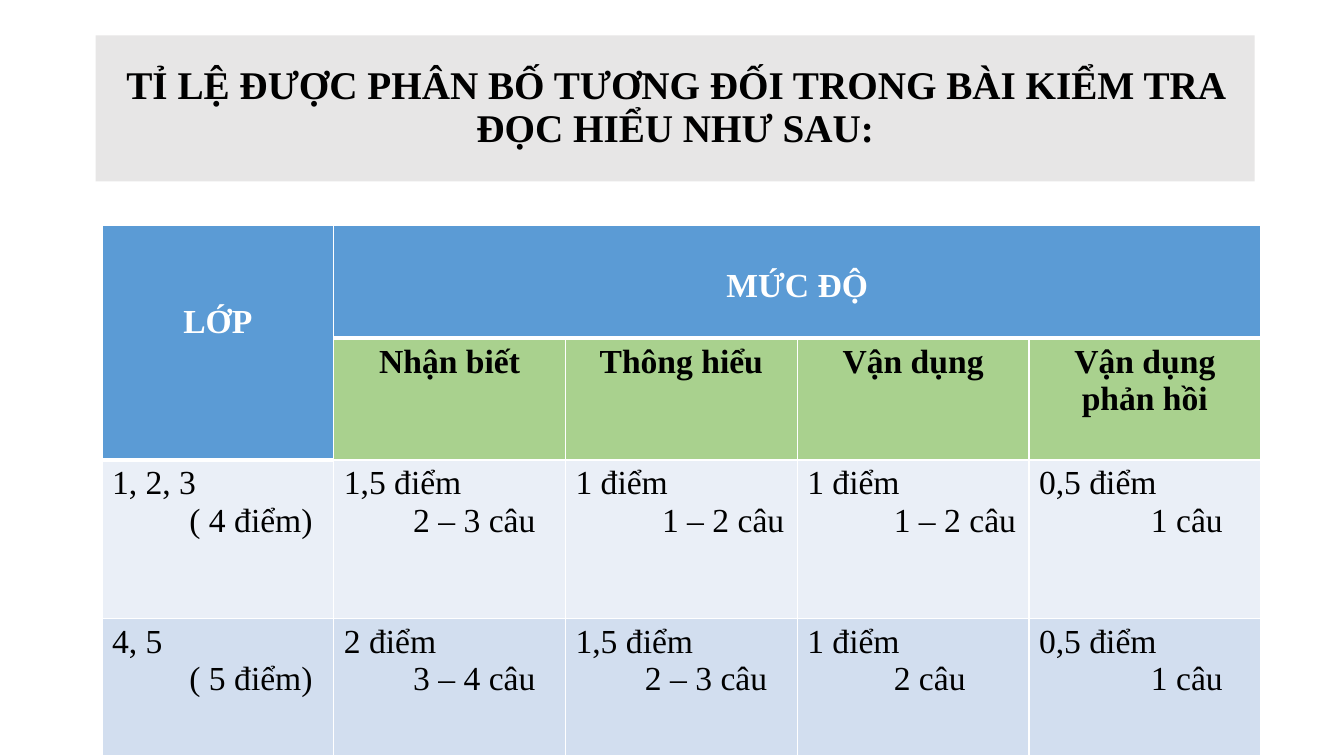
from lxml import etree
from pptx import Presentation
from pptx import util as u
from pptx.dml.color import RGBColor
from pptx.enum import shapes, text
from pptx.oxml.ns import qn

FONT = "Times New Roman"
BLACK, WHITE = "000000", "FFFFFF"
BLUE, GREEN = "5B9BD5", "A9D18E"
COLUMN_WIDTH = 5.84
ROW_HEIGHTS = (2.85, 3.07, 3.99, 3.47)

LEVELS = ("Nhận biết", "Thông hiểu", "Vận dụng", "Vận dụng phản hồi")
# Each body cell: first line, second line, indent of the second line in cm
BODY_ROWS = (
    ("EAEFF7", (("1, 2, 3", "( 4 điểm)", 1.95),
                ("1,5 điểm", "2 – 3 câu", 1.75),
                ("1 điểm", "1 – 2 câu", 2.18),
                ("1 điểm", "1 – 2 câu", 2.18),
                ("0,5 điểm", "1 câu", 2.82))),
    ("D2DEEF", (("4, 5", "( 5 điểm)", 1.95),
                ("2 điểm", "3 – 4 câu", 1.75),
                ("1,5 điểm", "2 – 3 câu", 1.75),
                ("1 điểm", "2 câu", 2.18),
                ("0,5 điểm", "1 câu", 2.82))),
)


def rgb(value):
    return RGBColor.from_string(value)


def style_paragraph(paragraph, size, color, bold, alignment):
    paragraph.alignment = alignment
    font = paragraph.font
    font.name, font.size, font.bold = FONT, u.Pt(size), bold
    font.color.rgb = rgb(color)


def add_title(slide, title):
    shape = slide.shapes.add_shape(shapes.MSO_SHAPE.RECTANGLE, u.Cm(2.41),
                                   u.Cm(0.89), u.Cm(29.21), u.Cm(3.68))
    shape.shadow.inherit = False
    shape.fill.solid()
    shape.fill.fore_color.rgb = rgb("E7E6E6")
    shape.line.fill.background()
    frame = shape.text_frame
    frame.word_wrap = True
    frame.vertical_anchor = text.MSO_ANCHOR.MIDDLE
    frame.text = title
    paragraph = frame.paragraphs[0]
    style_paragraph(paragraph, 28, BLACK, True, text.PP_ALIGN.CENTER)
    paragraph.line_spacing = 0.9


def set_borders(cell, bottom):
    properties = cell._tc.get_or_add_tcPr()
    for tag, points in (("lnL", 1), ("lnR", 1), ("lnT", 1), ("lnB", bottom)):
        line = etree.SubElement(properties, qn(f"a:{tag}"), w=str(u.Pt(points)))
        fill = etree.SubElement(line, qn("a:solidFill"))
        etree.SubElement(fill, qn("a:srgbClr"), val=WHITE)


def fill_cell(cell, fill):
    cell.fill.solid()
    cell.fill.fore_color.rgb = rgb(fill)


def write_heading(cell, heading, fill, color, top=0.13):
    fill_cell(cell, fill)
    cell.margin_top = u.Cm(top)
    cell.text = heading
    style_paragraph(cell.text_frame.paragraphs[0], 24, color, True,
                    text.PP_ALIGN.CENTER)


def write_body(cell, points, questions, indent, fill):
    fill_cell(cell, fill)
    cell.margin_right = u.Cm(0)
    cell.text = f"{points}\n{questions}"
    for paragraph in cell.text_frame.paragraphs:
        style_paragraph(paragraph, 24, BLACK, False, text.PP_ALIGN.LEFT)
    paragraph._p.get_or_add_pPr().set("marL", str(u.Cm(indent)))


def add_score_table(slide):
    columns = len(LEVELS) + 1
    table = slide.shapes.add_table(
        len(ROW_HEIGHTS), columns, u.Cm(2.57), u.Cm(5.67),
        u.Cm(COLUMN_WIDTH * columns), u.Cm(sum(ROW_HEIGHTS))).table
    for column in table.columns:
        column.width = u.Cm(COLUMN_WIDTH)
    for row, height in zip(table.rows, ROW_HEIGHTS):
        row.height = u.Cm(height)

    # Thick rule below the blue headings, thin rules elsewhere
    for row in range(len(ROW_HEIGHTS)):
        for column in range(columns):
            thick = row == 0 or (row, column) == (1, 0)
            set_borders(table.cell(row, column), 3 if thick else 1)

    # Headings
    table.cell(0, 0).merge(table.cell(1, 0))
    table.cell(0, 1).merge(table.cell(0, columns - 1))
    write_heading(table.cell(0, 0), "LỚP", BLUE, WHITE, top=1.99)
    write_heading(table.cell(0, 1), "MỨC ĐỘ", BLUE, WHITE, top=1.06)
    for column, level in enumerate(LEVELS, 1):
        write_heading(table.cell(1, column), level, GREEN, BLACK)

    # Scores and question counts
    for row, (fill, entries) in enumerate(BODY_ROWS, 2):
        for column, entry in enumerate(entries):
            write_body(table.cell(row, column), *entry, fill)


def main():
    presentation = Presentation()
    presentation.slide_width = u.Cm(33.87)
    presentation.slide_height = u.Cm(19.05)
    slide = presentation.slides.add_slide(presentation.slide_layouts[6])
    add_title(slide, "TỈ LỆ ĐƯỢC PHÂN BỐ TƯƠNG ĐỐI TRONG BÀI KIỂM TRA "
                     "ĐỌC HIỂU NHƯ SAU:")
    add_score_table(slide)
    presentation.save("out.pptx")


if __name__ == "__main__":
    main()
